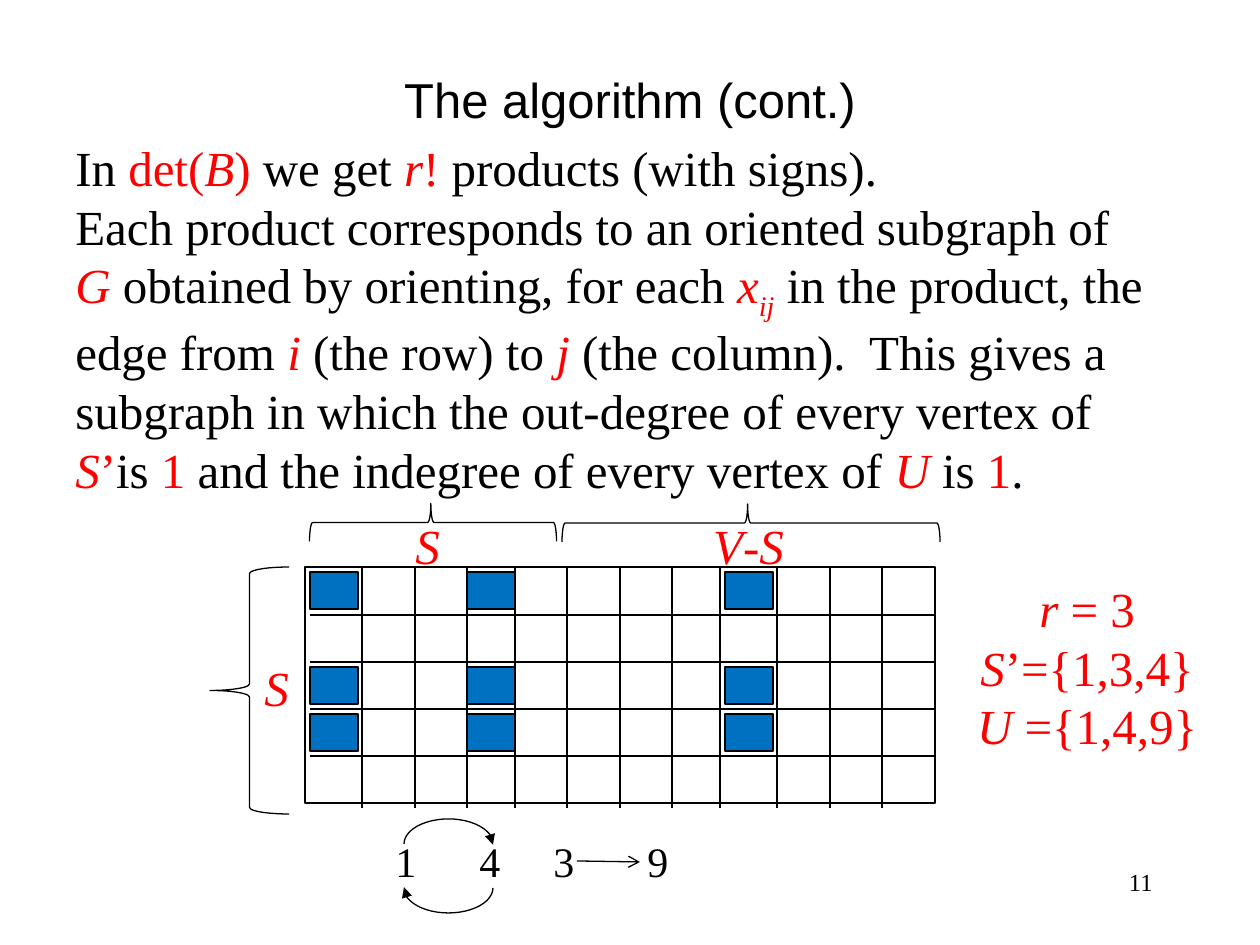
from lxml.etree import SubElement as Sub
from pptx import Presentation
from pptx.dml.color import RGBColor as Rgb
from pptx.enum.shapes import MSO_CONNECTOR as Conn, MSO_SHAPE as Kind
from pptx.enum.text import PP_ALIGN as Align
from pptx.oxml.ns import qn
from pptx.util import Emu, Pt

BLACK, RED, BLUE = "000000", "FF0000", "0070C0"
SERIF = "Times New Roman"


def px(num):
    return Emu(round(num * 914400 / 126))


def tint(code):
    return Rgb.from_string(code)


def add_run(para, text, style):
    for num, part in enumerate(text.split("\n")):
        if num:
            para.add_line_break()
        if not part:
            continue
        run = para.add_run()
        run.text = part
        if style:
            run.font.color.rgb = tint(RED)
        if style in ("var", "sub"):
            run.font.italic = True
        if style == "sub":
            run.font._element.set("baseline", "-25000")


def add_text(slide, box, runs, size=28, align=Align.CENTER, face=SERIF, code=BLACK):
    frame = slide.shapes.add_textbox(*map(px, box)).text_frame
    frame.word_wrap = True
    para = frame.paragraphs[0]
    para.alignment = align
    para.font.name = face
    para.font.size = Pt(size)
    para.font.color.rgb = tint(code)
    for text, style in runs:
        add_run(para, text, style)
    return para


def set_tabs(para, stops):
    tabs = Sub(para._p.get_or_add_pPr(), qn("a:tabLst"))
    para._p.pPr.insert(0, tabs)
    for stop in stops:
        Sub(tabs, qn("a:tab"), pos=str(px(stop)), algn="l")


def set_line(line):
    line.color.rgb = tint(BLACK)
    line.width = Pt(0.75)


def add_tip(shape, end, kind):
    Sub(shape.element.spPr.find(qn("a:ln")), qn(end), type=kind)


def add_shape(slide, kind, box, fill=None, turn=0):
    shape = slide.shapes.add_shape(kind, *map(px, box))
    shape.shadow.inherit = False
    shape.rotation = turn
    if fill:
        shape.fill.solid()
        shape.fill.fore_color.rgb = tint(fill)
    else:
        shape.fill.background()
    set_line(shape.line)
    return shape


def add_line(slide, *ends):
    line = slide.shapes.add_connector(Conn.STRAIGHT, *map(px, ends))
    set_line(line.line)
    Sub(line.element.spPr, qn("a:effectLst"))
    return line


def add_brace(slide, box, mid=0.5, turn=0):
    brace = add_shape(slide, Kind.LEFT_BRACE, box, turn=turn)
    brace.adjustments[0] = 0.083
    brace.adjustments[1] = mid


def add_arc(slide, top, turn):
    arc = add_shape(slide, Kind.ARC, (404, top, 89, 50), turn=turn)
    arc.adjustments[0] = 107.403
    arc.adjustments[1] = 0
    arc.element.spPr.xfrm.set("flipV", "1")
    add_tip(arc, "a:headEnd", "triangle")


def add_grid(slide):
    frame = add_shape(slide, Kind.RECTANGLE, (305, 567, 630, 236))
    for y in range(615, 757, 47):
        add_line(slide, 310, y, 935, y)
    for x in (362, 415, 467, 515, 567, 620, 672, 720, 777, 830, 882):
        line = add_line(slide, x, 567, x, 808)
        if x == 620:
            line.begin_connect(frame, 0)
    for y in (572, 667, 714):
        for x in (310, 467, 725):
            add_shape(slide, Kind.RECTANGLE, (x, y, 48, 37), BLUE)


def main():
    deck = Presentation()
    deck.slide_width, deck.slide_height = px(1260), px(945)
    slide = deck.slides.add_slide(deck.slide_layouts[6])

    add_text(slide, (903, 861, 262, 63), [("11", "")], 14, Align.RIGHT)
    add_text(slide, (58, 63, 1144, 72), [("The algorithm (cont.)", "")], face="Arial")
    add_text(slide, (63, 131, 1097, 369), [
        ("In ", ""), ("det(", "red"), ("B", "var"), (")", "red"),
        (" we get ", ""), ("r", "var"), ("!", "red"),
        (" products (with signs).\n"
         "Each product corresponds to an oriented subgraph of ", ""),
        ("G", "var"), (" obtained by orienting, for each ", ""),
        ("x", "var"), ("ij", "sub"), (" in the product, the edge from ", ""),
        ("i", "var"), (" (the row) to ", ""), ("j", "var"),
        (" (the column).  This gives a subgraph in which "
         "the out-degree of every vertex of ", ""),
        ("S", "var"), ("’", "red"), ("is ", ""), ("1", "red"),
        (" and the indegree of every vertex of ", ""),
        ("U", "var"), (" is ", ""), ("1", "red"), (".", ""),
    ], align=Align.LEFT)

    add_grid(slide)
    add_brace(slide, (210, 567, 79, 247))
    add_brace(slide, (414, 399, 38, 247), 0.509, 90)
    add_brace(slide, (732, 334, 38, 378), 0.509, 90)
    for x, y in ((237, 651), (388, 509)):
        para = add_text(slide, (x, y, 79, 72), [("S", "")], code=RED)
        para.font.italic = True
    add_text(slide, (678, 509, 141, 72),
             [("V", "var"), ("-", "red"), ("S", "var")], code=RED)

    nodes = add_text(slide, (383, 829, 301, 64), [("1\t4\t3\t9", "")], 24, Align.LEFT)
    set_tabs(nodes, (84, 158, 252))
    add_arc(slide, 819, 180)
    add_arc(slide, 863, 0)
    arrow = add_line(slide, 577, 861, 640, 862)
    add_tip(arrow, "a:tailEnd", "arrow")

    add_text(slide, (945, 572, 284, 190), [
        ("r ", "var"), ("= 3\n", "red"), ("S", "var"), ("’={1,3,4}\n", "red"),
        ("U", "var"), (" ={1,4,9}", "red"),
    ], code=RED)
    deck.save("out.pptx")


if __name__ == "__main__":
    main()
